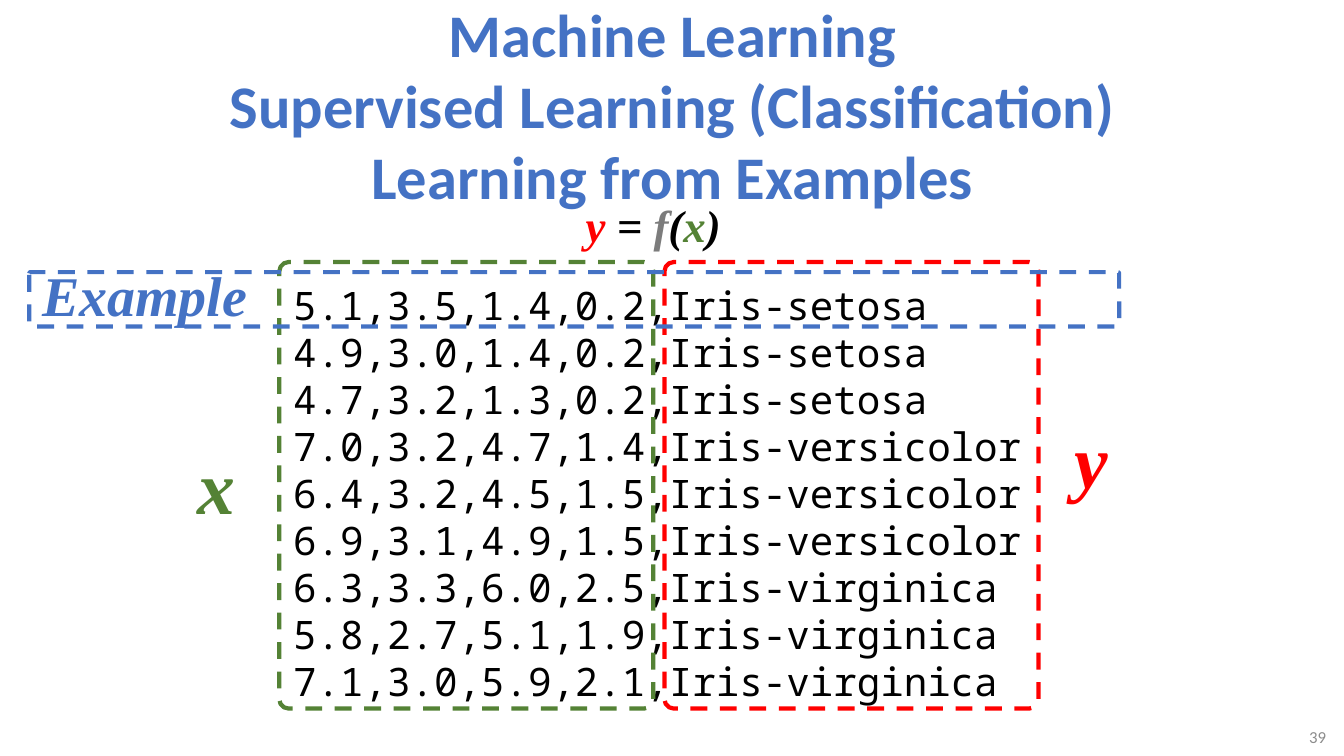
from pptx import Presentation
from pptx.dml.color import RGBColor
from pptx.enum.dml import MSO_LINE
from pptx.enum.shapes import MSO_SHAPE
from pptx.enum.text import MSO_ANCHOR, MSO_AUTO_SIZE, PP_ALIGN
from pptx.util import Inches, Pt

BLUE = RGBColor(0x44, 0x72, 0xC4)
GREEN = RGBColor(0x54, 0x82, 0x35)
RED = RGBColor(0xFF, 0x00, 0x00)
GRAY = RGBColor(0x7C, 0x7C, 0x7C)
PALE_GRAY = RGBColor(0x8C, 0x8C, 0x8C)
BLACK = RGBColor(0, 0, 0)

SANS, MONO, SERIF = "Calibri", "Noto Sans Mono", "Times New Roman"
LEFT, CENTER, RIGHT = PP_ALIGN.LEFT, PP_ALIGN.CENTER, PP_ALIGN.RIGHT
TOP, MIDDLE = MSO_ANCHOR.TOP, MSO_ANCHOR.MIDDLE
ROUNDED, DASH = MSO_SHAPE.ROUNDED_RECTANGLE, MSO_LINE.DASH
NO_FIT = MSO_AUTO_SIZE.NONE
TITLE_ONLY = 5

# Content
TITLE_LINES = [
    "Machine Learning",
    "Supervised Learning (Classification)",
    "Learning from Examples",
]
IRIS_ROWS = [
    "5.1,3.5,1.4,0.2,Iris-setosa",
    "4.9,3.0,1.4,0.2,Iris-setosa",
    "4.7,3.2,1.3,0.2,Iris-setosa",
    "7.0,3.2,4.7,1.4,Iris-versicolor",
    "6.4,3.2,4.5,1.5,Iris-versicolor",
    "6.9,3.1,4.9,1.5,Iris-versicolor",
    "6.3,3.3,6.0,2.5,Iris-virginica",
    "5.8,2.7,5.1,1.9,Iris-virginica",
    "7.1,3.0,5.9,2.1,Iris-virginica",
]
FORMULA = [("y", RED), (" = ", BLACK), ("f", GRAY),
           ("(", BLACK), ("x", GREEN), (")", BLACK)]
# Labels: runs, size, (left, top, width, height)
LABELS = [
    ([("x", GREEN)], 54, (1.86, 4.3, 0.58, 1.01)),
    ([("y", RED)], 54, (10.56, 4.05, 0.54, 1.01)),
    (FORMULA, 32, (5.71, 1.91, 1.59, 0.64)),
    ([("Example", BLUE)], 40, (0.32, 2.54, 2.26, 0.77)),
]
# Dashed frames: colour, (left, top, width, height)
COLUMN_FRAMES = [
    (GREEN, (2.77, 2.6, 3.71, 4.43)),
    (RED, (6.59, 2.6, 3.71, 4.43)),
]
EXAMPLE_FRAME = (BLUE, (0.29, 2.7, 10.81, 0.54))


def inches(values):
    return [Inches(value) for value in values]


def add_span(para, text, font, size, color, bold=False, italic=False):
    span = para.add_run()
    span.text = text
    span.font.name = font
    span.font.size = Pt(size)
    span.font.color.rgb = color
    span.font.bold = bold
    span.font.italic = italic


def add_text_frame(page, place, wrap=True, anchor=TOP):
    frame = page.shapes.add_textbox(*inches(place)).text_frame
    frame.word_wrap = wrap
    frame.vertical_anchor = anchor
    return frame


def add_title(page):
    title = page.shapes.title
    title.left, title.top, title.width, title.height = inches((1.94, 0, 9.46, 2.12))
    frame = title.text_frame
    frame.auto_size = NO_FIT
    frame.vertical_anchor = MIDDLE
    para = frame.paragraphs[0]
    para.alignment = CENTER
    para.line_spacing = 0.98
    for index, line in enumerate(TITLE_LINES):
        if index:
            para.add_line_break()
        add_span(para, line, SANS, 43.2, BLUE, bold=True)


def add_iris_rows(page):
    frame = add_text_frame(page, (2.81, 2.74, 8.43, 4.34))
    for index, row in enumerate(IRIS_ROWS):
        para = frame.add_paragraph() if index else frame.paragraphs[0]
        para.alignment = LEFT
        para.line_spacing = Pt(33.6)
        add_span(para, row, MONO, 28, BLACK)


def add_label(page, spans, size, place):
    para = add_text_frame(page, place, wrap=False).paragraphs[0]
    for text, color in spans:
        add_span(para, text, SERIF, size, color, bold=True, italic=True)


def add_dashed_frame(page, color, place):
    box = page.shapes.add_shape(ROUNDED, *inches(place))
    box.adjustments[0] = 0.025
    box.shadow.inherit = False
    box.fill.background()
    box.line.color.rgb = color
    box.line.width = Pt(3)
    box.line.dash_style = DASH


def main():
    deck = Presentation()
    deck.slide_width, deck.slide_height = Inches(13.33), Inches(7.5)
    page = deck.slides.add_slide(deck.slide_layouts[TITLE_ONLY])

    add_title(page)

    # Page number
    number = add_text_frame(page, (12.2, 7.18, 1.05, 0.26), anchor=MIDDLE).paragraphs[0]
    number.alignment = RIGHT
    add_span(number, "39", SANS, 12, PALE_GRAY)

    # Data with its input and output columns
    add_iris_rows(page)
    for color, place in COLUMN_FRAMES:
        add_dashed_frame(page, color, place)

    # Labels and the marked example row
    for spans, size, place in LABELS:
        add_label(page, spans, size, place)
    add_dashed_frame(page, *EXAMPLE_FRAME)

    deck.save("out.pptx")


if __name__ == "__main__":
    main()
